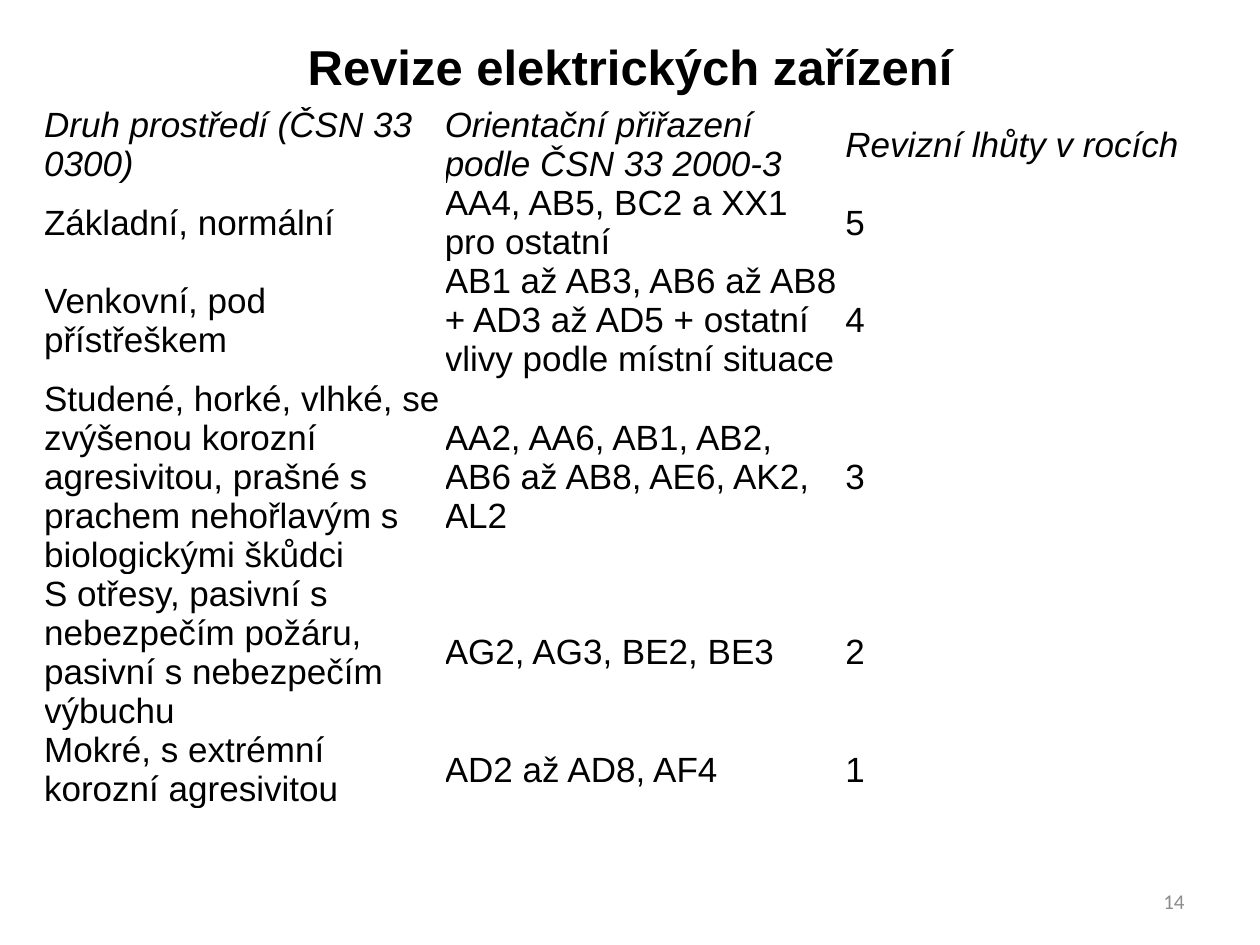
import pptx
import pptx.dml.color
import pptx.enum.text
import pptx.util

Inches = pptx.util.Inches
ALIGN = pptx.enum.text.PP_ALIGN
MIDDLE = pptx.enum.text.MSO_ANCHOR.MIDDLE

COLORS = {"text": "000000", "number": "8C8C8C", "cell": "FFFFFF"}
COLUMN_WIDTH = 3.18
LINE_HEIGHT = 0.31
ROW_LINES = [2, 2, 3, 5, 4, 2]
ROWS = [
    ("Druh prostředí (ČSN 33 0300)", "Orientační přiřazení podle ČSN 33 2000-3", "Revizní lhůty v rocích"),
    ("Základní, normální", "AA4, AB5, BC2 a XX1 pro ostatní", "5"),
    ("Venkovní, pod přístřeškem",
     "AB1 až AB3, AB6 až AB8 + AD3 až AD5 + ostatní vlivy podle místní situace", "4"),
    ("Studené, horké, vlhké, se zvýšenou korozní agresivitou, prašné s prachem nehořlavým s biologickými škůdci",
     "AA2, AA6, AB1, AB2, AB6 až AB8, AE6, AK2, AL2", "3"),
    ("S otřesy, pasivní s nebezpečím požáru, pasivní s nebezpečím výbuchu", "AG2, AG3, BE2, BE3", "2"),
    ("Mokré, s extrémní korozní agresivitou", "AD2 až AD8, AF4", "1"),
]


def color(name):
    return pptx.dml.color.RGBColor.from_string(COLORS[name])


def write_text(text_frame, text, size=20, font="Arial", fill="text", bold=False, italic=False, align=ALIGN.LEFT):
    text_frame.word_wrap = True
    paragraph = text_frame.paragraphs[0]
    paragraph.alignment = align
    run = paragraph.add_run()
    run.text = text
    run.font.size = pptx.util.Pt(size)
    run.font.name = font
    run.font.color.rgb = color(fill)
    run.font.bold = bold
    run.font.italic = italic


def add_title(slide, text):
    title = slide.shapes.title
    title.left, title.top, title.width, title.height = map(Inches, (0.5, 0.21, 9, 0.63))
    title.text_frame.auto_size = pptx.enum.text.MSO_AUTO_SIZE.NONE
    title.text_frame.vertical_anchor = MIDDLE
    write_text(title.text_frame, text, size=28, bold=True, align=ALIGN.CENTER)


def add_intervals_table(slide):
    column_count = len(ROWS[0])
    frame = slide.shapes.add_table(
        len(ROWS), column_count, Inches(0.35), Inches(0.84),
        Inches(COLUMN_WIDTH * column_count), Inches(LINE_HEIGHT * sum(ROW_LINES)))
    table = frame.table
    table.horz_banding = False
    for column in table.columns:
        column.width = Inches(COLUMN_WIDTH)
    for row_index, (row, lines, texts) in enumerate(zip(table.rows, ROW_LINES, ROWS)):
        row.height = Inches(LINE_HEIGHT * lines)
        for cell, text in zip(row.cells, texts):
            cell.margin_left = cell.margin_right = cell.margin_top = cell.margin_bottom = 0
            cell.vertical_anchor = MIDDLE
            cell.fill.solid()
            cell.fill.fore_color.rgb = color("cell")
            write_text(cell.text_frame, text, italic=row_index == 0)


def add_slide_number(slide, text):
    box = slide.shapes.add_textbox(Inches(7.17), Inches(6.95), Inches(2.33), Inches(0.4))
    box.text_frame.vertical_anchor = MIDDLE
    write_text(box.text_frame, text, size=12, font="Calibri", fill="number", align=ALIGN.RIGHT)


def main():
    presentation = pptx.Presentation()
    presentation.slide_width, presentation.slide_height = Inches(10), Inches(7.5)
    slide = presentation.slides.add_slide(presentation.slide_layouts[5])
    add_title(slide, "Revize elektrických zařízení")
    add_intervals_table(slide)
    add_slide_number(slide, "14")
    presentation.save("out.pptx")


if __name__ == "__main__":
    main()
